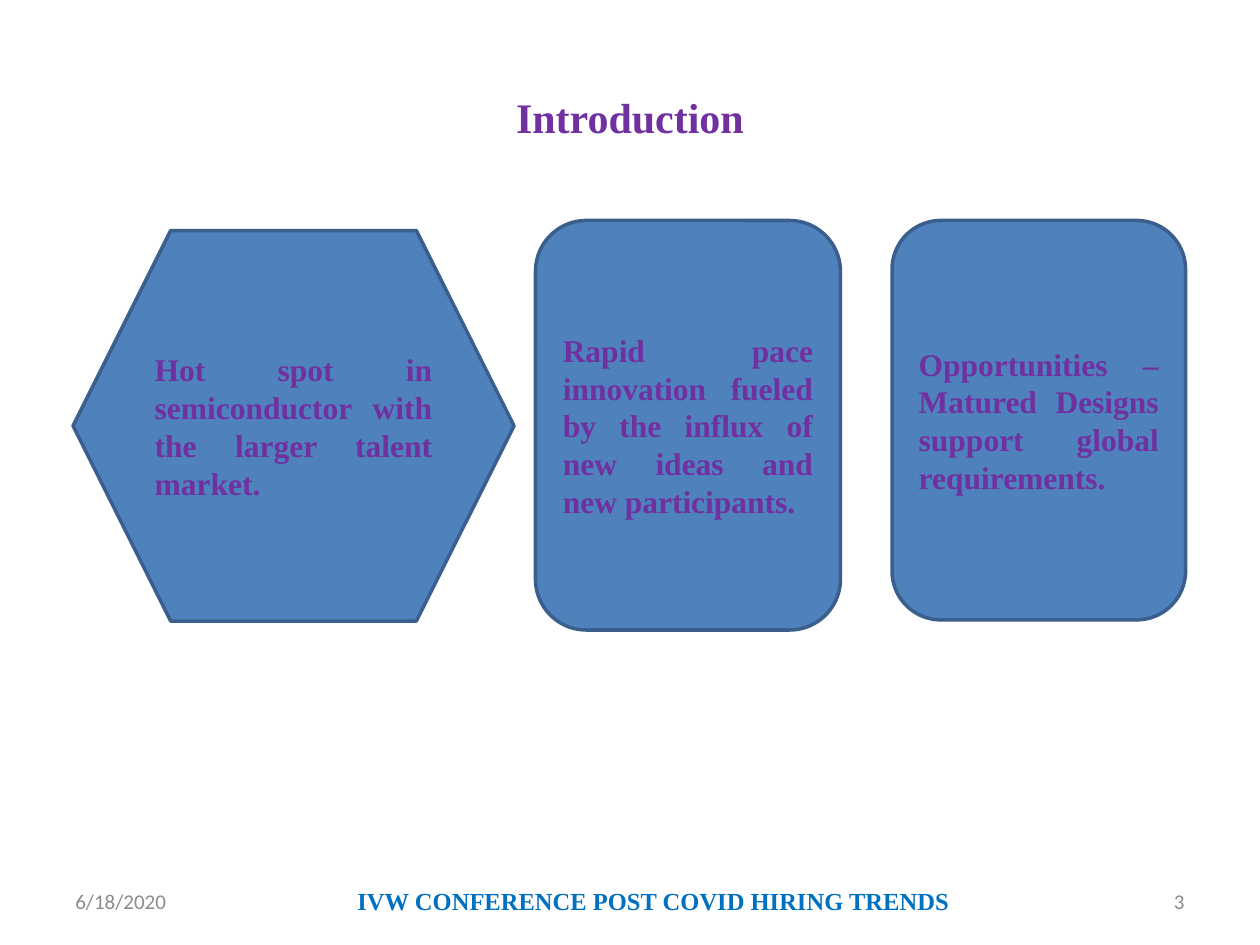
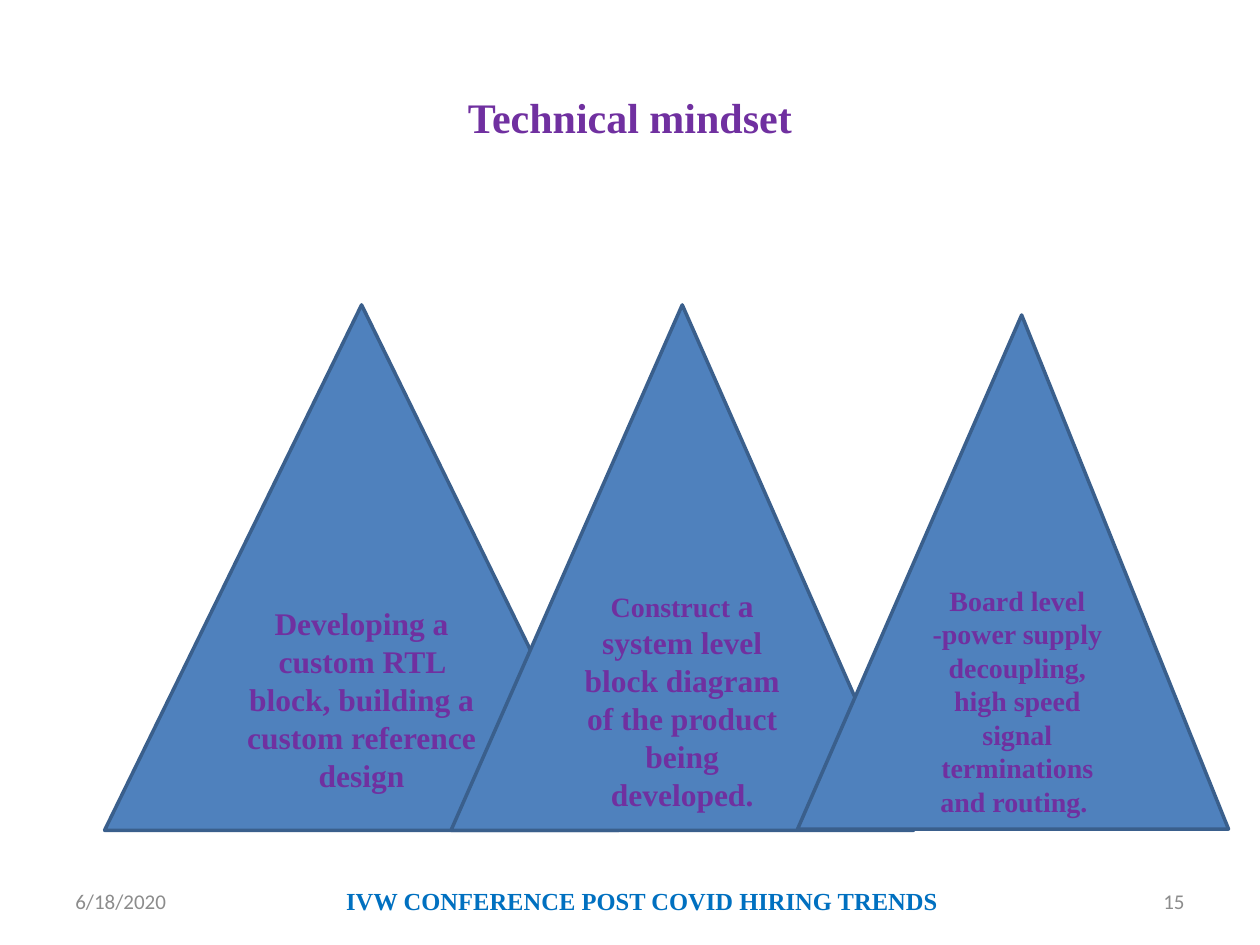
import pptx
import pptx.util
import pptx.dml.color
import pptx.enum.shapes
import pptx.enum.text

Inches = pptx.util.Inches
Pt = pptx.util.Pt
RGBColor = pptx.dml.color.RGBColor
KIND = pptx.enum.shapes.MSO_SHAPE
ALIGN = pptx.enum.text.PP_ALIGN
MIDDLE = pptx.enum.text.MSO_ANCHOR.MIDDLE

PURPLE = RGBColor(0x70, 0x30, 0xA0)
BLUE = RGBColor(0x4F, 0x81, 0xBD)
EDGE = RGBColor(0x3A, 0x5F, 0x8C)
SKY = RGBColor(0x00, 0x70, 0xC0)
GREY = RGBColor(0x8C, 0x8C, 0x8C)

SERIF = {"name": "Times New Roman", "bold": True}
TITLE = {**SERIF, "size": Pt(24), "color": PURPLE}
BODY = {**SERIF, "size": Pt(18), "color": PURPLE}
SMALL = {**BODY, "size": Pt(16)}
EVENT = {**SERIF, "size": Pt(14), "color": SKY}
NOTE = {"name": "Calibri", "size": Pt(12), "color": GREY}

DATE = "6/18/2020"
MOTTO = "IVW CONFERENCE POST COVID HIRING TRENDS "
FOOT_TOP, FOOT_HIGH = 6.95, 0.4
SIDE, NOTE_WIDE = 0.5, 2.33

SLIDES = [
    {
        "title": "Introduction", "page": "3", "motto": (2.5, 5.42), "align": ALIGN.JUSTIFY,
        "shapes": [
            (KIND.HEXAGON, (0.58, 1.83, 3.5, 3.1), None,
             [("Hot spot in semiconductor with the larger talent market.", BODY)]),
            (KIND.ROUNDED_RECTANGLE, (4.25, 1.75, 2.42, 3.25), None,
             [("Rapid pace innovation fueled by the influx of new ideas and new participants.", BODY)]),
            (KIND.FLOWCHART_ALTERNATE_PROCESS, (7.08, 1.75, 2.33, 3.17), None,
             [("Opportunities –Matured Designs support global requirements.", BODY)]),
        ],
    },
    {
        "title": "Technical mindset", "page": "15", "motto": (2.58, 5.08), "align": ALIGN.CENTER,
        "shapes": [
            (KIND.ISOSCELES_TRIANGLE, (0.83, 2.42, 4.08, 4.17), 0.5,
             [("Developing a custom RTL block, building a custom reference design", BODY)]),
            (KIND.ISOSCELES_TRIANGLE, (3.58, 2.42, 3.67, 4.17), 0.5,
             [("Construct", SMALL),
              (" a system level block diagram of the product being developed.", BODY)]),
            (KIND.ISOSCELES_TRIANGLE, (6.33, 2.5, 3.42, 4.08), 0.52,
             [("Board level -power supply decoupling, high speed signal terminations and routing. ", SMALL)]),
        ],
    },
]


def write(shape, runs, align):
    frame = shape.text_frame
    frame.word_wrap = True
    frame.vertical_anchor = MIDDLE
    para = frame.paragraphs[0]
    para.alignment = align
    for text, style in runs:
        run = para.add_run()
        run.text = text
        for key, value in style.items():
            if key == "color":
                run.font.color.rgb = value
            else:
                setattr(run.font, key, value)


def label(slide, box, text, style, align):
    shape = slide.shapes.add_textbox(*map(Inches, box))
    write(shape, [(text, style)], align)


def block(slide, kind, box, peak, runs, align):
    shape = slide.shapes.add_shape(kind, *map(Inches, box))
    shape.shadow.inherit = False
    shape.fill.solid()
    shape.fill.fore_color.rgb = BLUE
    shape.line.color.rgb = EDGE
    shape.line.width = Pt(2)
    if peak is not None:
        shape.adjustments[0] = peak
    write(shape, runs, align)


def footer(slide, page, motto):
    left, wide = motto
    right = 10 - SIDE - NOTE_WIDE
    for start, width, text, style, align in (
        (SIDE, NOTE_WIDE, DATE, NOTE, ALIGN.LEFT),
        (right, NOTE_WIDE, page, NOTE, ALIGN.RIGHT),
        (left, wide, MOTTO, EVENT, ALIGN.CENTER),
    ):
        label(slide, (start, FOOT_TOP, width, FOOT_HIGH), text, style, align)


def main():
    deck = pptx.Presentation()
    deck.slide_width, deck.slide_height = Inches(10), Inches(7.5)
    for data in SLIDES:
        slide = deck.slides.add_slide(deck.slide_layouts[6])
        label(slide, (0.5, 0.3, 9, 1.25), data["title"], TITLE, ALIGN.CENTER)
        for kind, box, peak, runs in data["shapes"]:
            block(slide, kind, box, peak, runs, data["align"])
        footer(slide, data["page"], data["motto"])
    deck.save("out.pptx")


if __name__ == "__main__":
    main()
